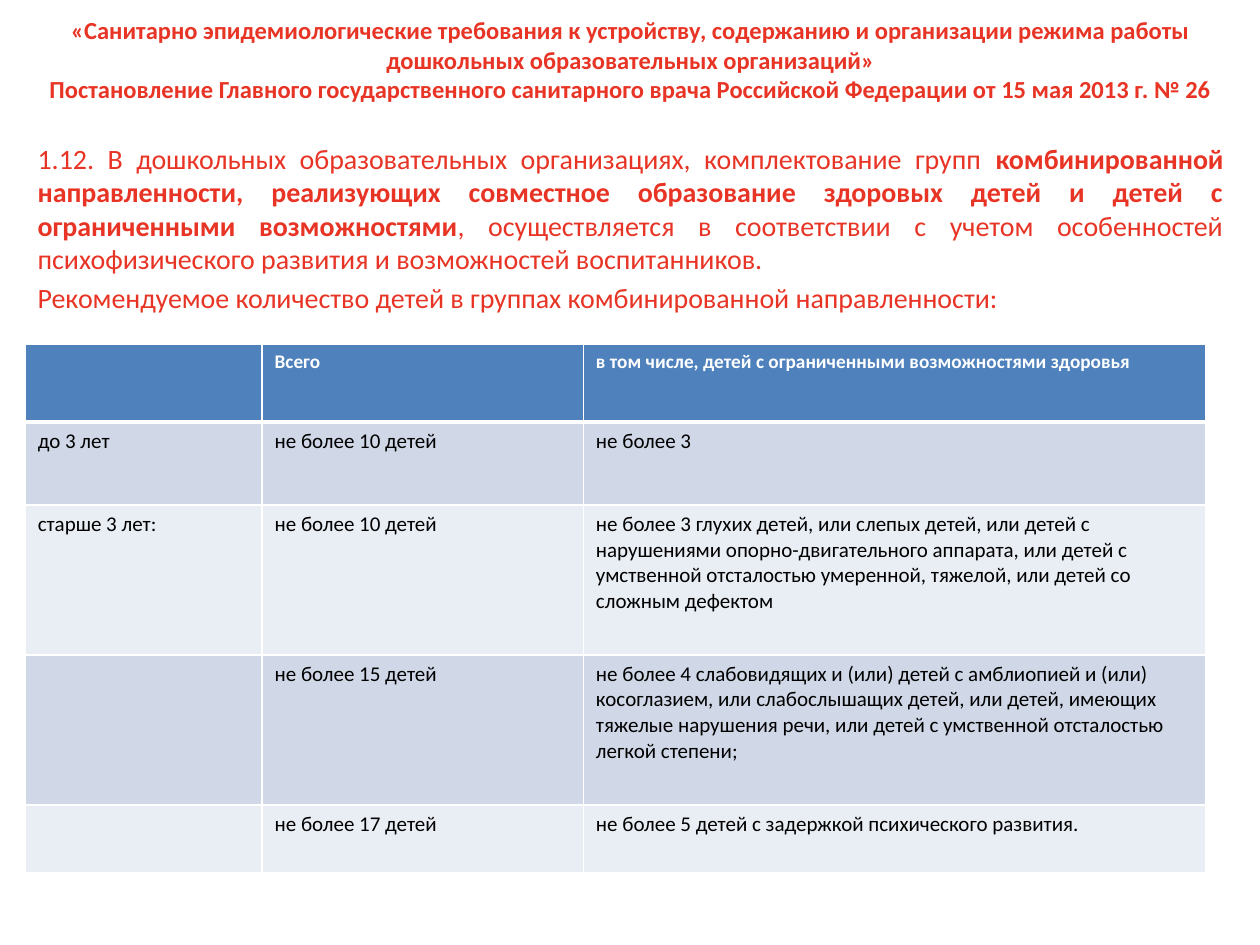
from lxml import etree
from pptx import Presentation
from pptx.dml.color import RGBColor
from pptx.enum.text import MSO_ANCHOR, PP_ALIGN
from pptx.oxml.ns import qn
from pptx.util import Inches, Pt

CENTER, JUSTIFY, LEFT = PP_ALIGN.CENTER, PP_ALIGN.JUSTIFY, PP_ALIGN.LEFT
MIDDLE, TOP = MSO_ANCHOR.MIDDLE, MSO_ANCHOR.TOP
FONT = "Calibri"
RED, WHITE, BLACK = "E83425", "FFFFFF", "000000"
HEADER_FILL = "4F81BD"
BAND_FILLS = ["D0D8E8", "E9EDF4"]
MARGIN = 0.2
TEXT_WIDTH = 9.61
COLUMN_WIDTHS = [1.88, 2.55, 4.94]
ROW_HEIGHTS = [0.62, 0.66, 1.19, 1.19, 0.54]

TITLE_LINES = [
    "«Санитарно эпидемиологические требования к устройству, содержанию и организации "
    "режима работы дошкольных образовательных организаций»",
    "Постановление Главного государственного санитарного врача Российской Федерации "
    "от 15 мая 2013 г. № 26",
]
BODY_PARAGRAPHS = [
    [
        ("1.12. В дошкольных образовательных организациях, комплектование групп ", False),
        ("комбинированной направленности, реализующих совместное образование "
         "здоровых детей и детей с ограниченными возможностями", True),
        (", осуществляется в соответствии с учетом особенностей психофизического "
         "развития и возможностей воспитанников.", False),
    ],
    [("Рекомендуемое количество детей в группах комбинированной направленности:", False)],
]
GROUP_ROWS = [
    ["", "Всего", "в том числе, детей с ограниченными возможностями здоровья"],
    ["до 3 лет", "не более 10 детей", "не более 3"],
    ["старше 3 лет:", "не более 10 детей",
     "не более 3 глухих детей, или слепых детей, или детей с нарушениями "
     "опорно-двигательного аппарата, или детей с умственной отсталостью умеренной, "
     "тяжелой, или детей со сложным дефектом"],
    ["", "не более 15 детей",
     "не более 4 слабовидящих и (или) детей с амблиопией и (или) косоглазием, или "
     "слабослышащих детей, или детей, имеющих тяжелые нарушения речи, или детей с "
     "умственной отсталостью легкой степени;"],
    ["", "не более 17 детей", "не более 5 детей с задержкой психического развития."],
]


def color(value):
    return RGBColor.from_string(value)


def add_run(paragraph, text, size, text_color, bold=False):
    run = paragraph.add_run()
    run.text = text
    run.font.name = FONT
    run.font.size = Pt(size)
    run.font.bold = bold
    run.font.color.rgb = color(text_color)


def add_text(slide, top, height, paragraphs, size, alignment, anchor, gap=0):
    shape = slide.shapes.add_textbox(
        Inches(MARGIN), Inches(top), Inches(TEXT_WIDTH), Inches(height))
    frame = shape.text_frame
    frame.word_wrap = True
    frame.vertical_anchor = anchor
    for index, runs in enumerate(paragraphs):
        paragraph = frame.add_paragraph() if index else frame.paragraphs[0]
        paragraph.alignment = alignment
        paragraph.space_before = Pt(gap if index else 0)
        for text, bold in runs:
            add_run(paragraph, text, size, RED, bold)
    return frame


def set_borders(cell, bottom_width):
    properties = cell._tc.get_or_add_tcPr()
    widths = {"a:lnL": 1, "a:lnR": 1, "a:lnT": 1, "a:lnB": bottom_width}
    for index, (tag, width) in enumerate(widths.items()):
        line = etree.Element(qn(tag), w=str(Pt(width)))
        fill = etree.SubElement(line, qn("a:solidFill"))
        etree.SubElement(fill, qn("a:srgbClr"), val=WHITE)
        properties.insert(index, line)


def fill_cell(cell, text, row_index):
    header = row_index == 0
    cell.fill.solid()
    cell.fill.fore_color.rgb = color(
        HEADER_FILL if header else BAND_FILLS[(row_index - 1) % 2])
    set_borders(cell, 3 if header else 1)
    if text:
        paragraph = cell.text_frame.paragraphs[0]
        paragraph.alignment = LEFT
        add_run(paragraph, text, 11 if header else 12, WHITE if header else BLACK, header)


def add_group_table(slide, top):
    table = slide.shapes.add_table(
        len(ROW_HEIGHTS), len(COLUMN_WIDTHS), Inches(MARGIN), Inches(top),
        Inches(sum(COLUMN_WIDTHS)), Inches(sum(ROW_HEIGHTS))).table
    for column, width in zip(table.columns, COLUMN_WIDTHS):
        column.width = Inches(width)
    for row_index, (row, height) in enumerate(zip(table.rows, ROW_HEIGHTS)):
        row.height = Inches(height)
        for cell, text in zip(row.cells, GROUP_ROWS[row_index]):
            fill_cell(cell, text, row_index)


def main():
    presentation = Presentation()
    presentation.slide_width = Inches(10)
    presentation.slide_height = Inches(7.5)
    slide = presentation.slides.add_slide(presentation.slide_layouts[6])
    title = add_text(slide, 0.21, 0.71, [[(line, True)] for line in TITLE_LINES],
                     14, CENTER, MIDDLE)
    title.margin_top = 0
    title.margin_bottom = Inches(0.19)
    add_text(slide, 1.07, 6.22, BODY_PARAGRAPHS, 16, JUSTIFY, TOP, 3.2)
    add_group_table(slide, 2.73)
    presentation.save("out.pptx")


if __name__ == "__main__":
    main()
